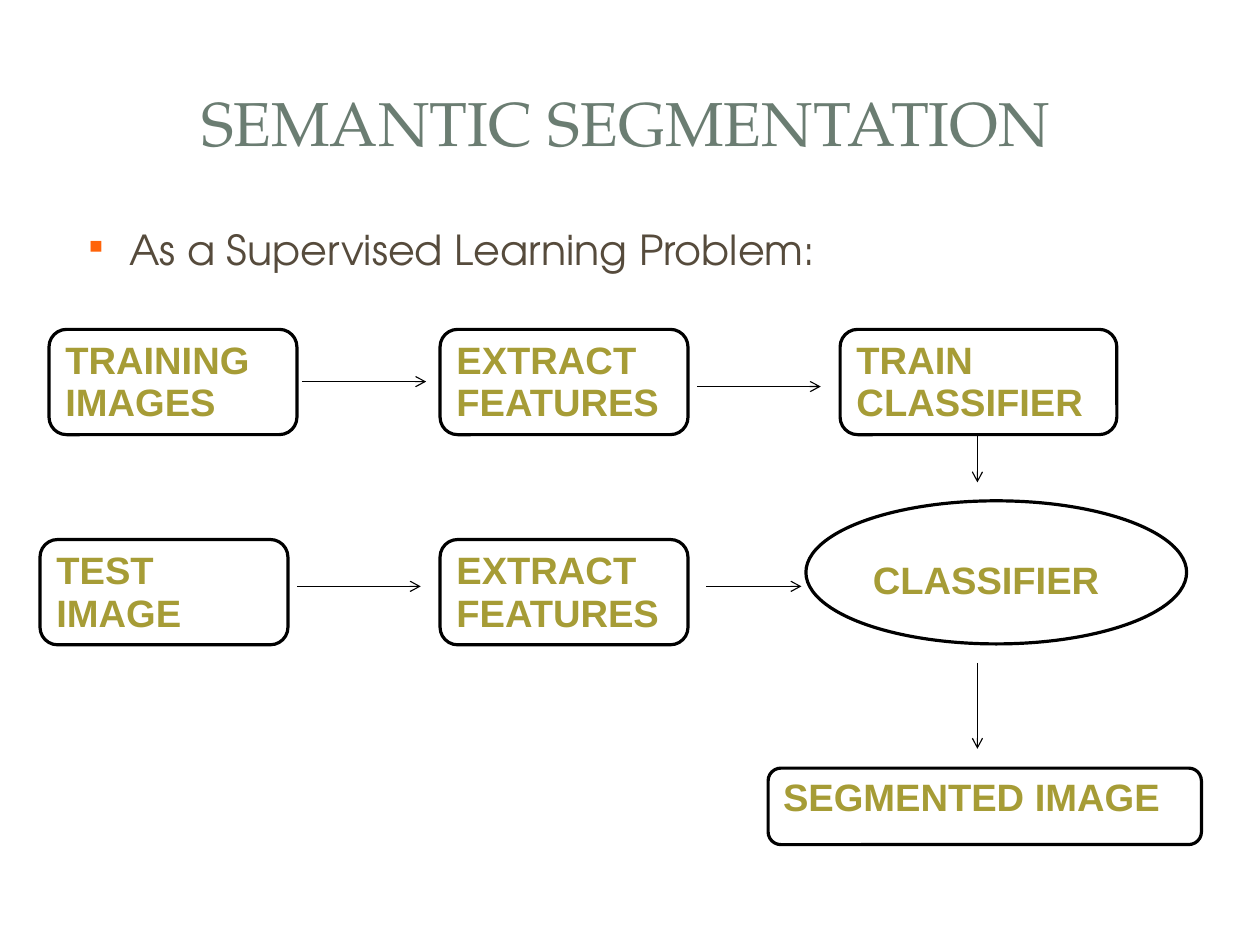
"""Build a slide that shows semantic segmentation as a supervised learning flow."""
from dataclasses import dataclass

from lxml import etree
from pptx import Presentation
from pptx.dml.color import RGBColor
from pptx.enum.shapes import MSO_CONNECTOR, MSO_SHAPE
from pptx.enum.text import MSO_ANCHOR, MSO_AUTO_SIZE, PP_ALIGN
from pptx.oxml.ns import qn
from pptx.util import Cm, Pt

ROUND = MSO_SHAPE.ROUNDED_RECTANGLE
OVAL = MSO_SHAPE.OVAL
LINE = MSO_CONNECTOR.STRAIGHT
TOP, MIDDLE = MSO_ANCHOR.TOP, MSO_ANCHOR.MIDDLE
LEFT, CENTER = PP_ALIGN.LEFT, PP_ALIGN.CENTER


@dataclass
class Theme:
    title: tuple = ("TeX Gyre Pagella", 39, "6B7D72", False)
    lead: tuple = ("TeX Gyre Adventor", 26, "564B3C", False)
    step: tuple = ("Arial", 24, "A69C36", True)
    bullet: str = "FF6309"
    ink: str = "000000"
    paper: str = "FFFFFF"


theme = Theme()


def write(shape, text, style, align, anchor, pads):
    """Put styled text in a shape and return its paragraph."""
    frame = shape.text_frame
    frame.text = text
    frame.word_wrap = True
    frame.auto_size = MSO_AUTO_SIZE.NONE
    frame.vertical_anchor = anchor
    side, top, low = pads
    frame.margin_left = frame.margin_right = Cm(side)
    frame.margin_top, frame.margin_bottom = Cm(top), Cm(low)
    para = frame.paragraphs[0]
    para.alignment = align
    font = para.runs[0].font
    name, size, color, font.bold = style
    font.name, font.size = name, Pt(size)
    font.color.rgb = RGBColor.from_string(color)
    return para


deck = Presentation()
deck.slide_width, deck.slide_height = Cm(28), Cm(21)
slide = deck.slides.add_slide(deck.slide_layouts[5])
shapes = slide.shapes

title = shapes.title
title.left, title.top = Cm(1.3), Cm(0.97)
title.width, title.height = Cm(25.2), Cm(3.5)
write(title, "SEMANTIC SEGMENTATION", theme.title, CENTER, MIDDLE,
      (0.28, 0.1, 0.15))

lead = shapes.add_textbox(Cm(1.4), Cm(4.9), Cm(25.2), Cm(1.5))
para = write(lead, "As a Supervised Learning Problem:", theme.lead, LEFT, TOP,
             (0.28, 0.08, 0.15))
props = para._p.get_or_add_pPr()
props.set("marL", str(Cm(1.19)))
props.set("indent", str(Cm(-0.89)))
color = etree.SubElement(props, qn("a:buClr"))
etree.SubElement(color, qn("a:srgbClr"), val=theme.bullet)
etree.SubElement(props, qn("a:buSzPct"), val="45000")
etree.SubElement(props, qn("a:buChar"), char="■")

wide, high = 5.51, 2.34
mid, right = 9.78, 18.67
train, test = 7.32, 11.99
steps = [
    ("TRAINING IMAGES", ROUND, 1.09, train, wide, high, 0.13),
    ("EXTRACT FEATURES", ROUND, mid, train, wide, high, 0.13),
    ("TRAIN CLASSIFIER", ROUND, right, train, 6.15, high, 0.13),
    ("TEST IMAGE", ROUND, 0.89, test, wide, high, 0.13),
    ("EXTRACT FEATURES", ROUND, mid, test, wide, high, 0.13),
    ("CLASSIFIER", OVAL, 17.91, 11.13, 8.46, 3.18, 0.85),
    ("SEGMENTED IMAGE", ROUND, 17.07, 17.07, 9.63, 1.7, 0.13),
]
for text, kind, x, y, w, h, pad in steps:
    step = shapes.add_shape(kind, Cm(x), Cm(y), Cm(w), Cm(h))
    step.shadow.inherit = False
    step.fill.solid()
    step.fill.fore_color.rgb = RGBColor.from_string(theme.paper)
    step.line.color.rgb = RGBColor.from_string(theme.ink)
    step.line.width = Pt(2)
    para = write(step, text, theme.step, LEFT, TOP, (0.25, pad, 0.13))
    para.line_spacing = 0.93

down, across = 21.72, 13.03
arrows = [
    (6.71, 8.48, 9.47, 8.48),
    (15.49, 8.59, 18.24, 8.59),
    (6.6, across, 9.35, across),
    (15.7, across, 17.81, across),
    (down, 9.65, down, 10.72),
    (down, 14.73, down, 16.64),
]
for ends in arrows:
    arrow = shapes.add_connector(LINE, *map(Cm, ends))
    arrow.line.color.rgb = RGBColor.from_string(theme.ink)
    arrow.line.width = Pt(0.75)
    etree.SubElement(arrow.line._get_or_add_ln(), qn("a:tailEnd"), type="arrow")
    etree.SubElement(arrow._element.spPr, qn("a:effectLst"))

deck.save("out.pptx")
